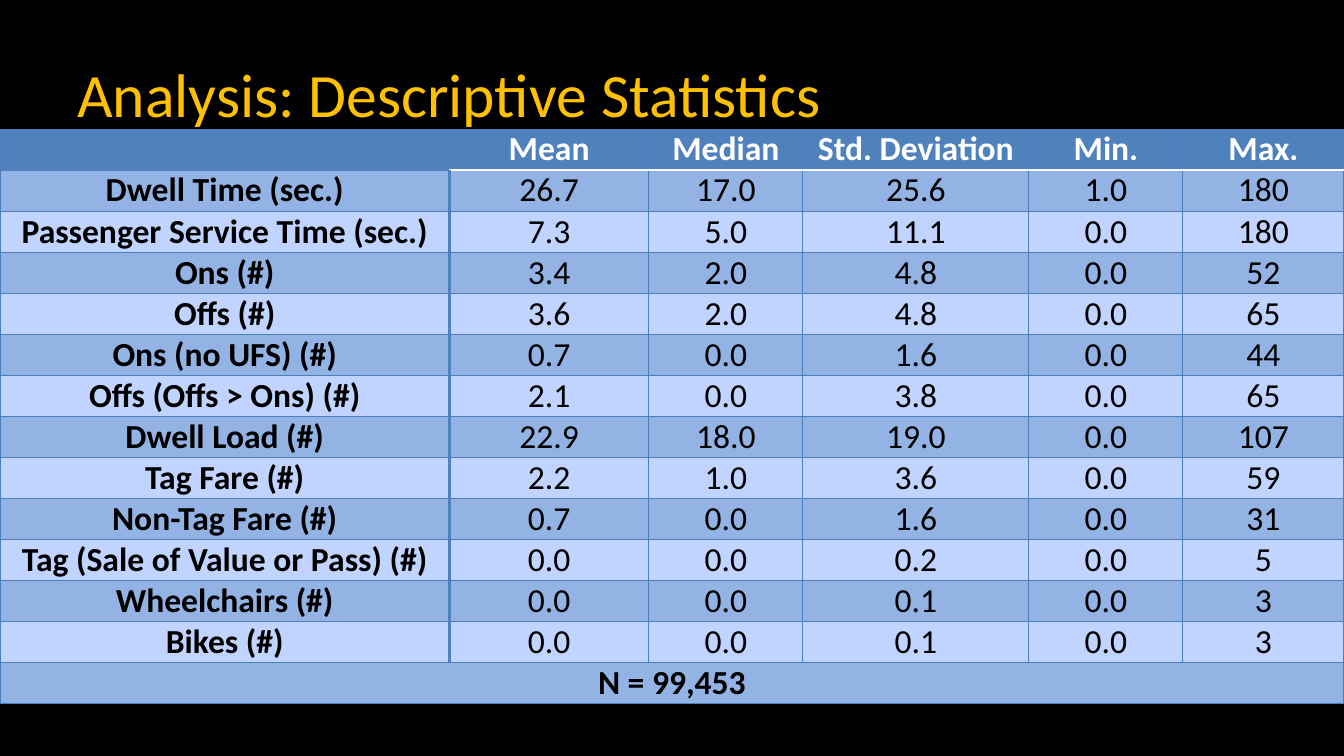
from pptx import Presentation
from pptx.dml.color import RGBColor
from pptx.enum.text import MSO_ANCHOR, PP_ALIGN
from pptx.oxml.xmlchemy import OxmlElement
from pptx.util import Pt

HEADER, DARK, LIGHT = "4F81BD", "93B3E5", "C0D4FF"
THIN = ("4B7EBC", 0.75)
HEADER_RULE = ("FFFFFF", 2)
LABEL_RULE = ("4F81BD", 2)
COL_WIDTHS = [321, 142.5, 110, 161.5, 110, 115]
ROW_HEIGHT = 29.3
ROWS = [
    ["", "Mean", "Median", "Std. Deviation", "Min.", "Max."],
    ["Dwell Time (sec.)", "26.7", "17.0", "25.6", "1.0", "180"],
    ["Passenger Service Time (sec.)", "7.3", "5.0", "11.1", "0.0", "180"],
    ["Ons (#)", "3.4", "2.0", "4.8", "0.0", "52"],
    ["Offs (#)", "3.6", "2.0", "4.8", "0.0", "65"],
    ["Ons (no UFS) (#)", "0.7", "0.0", "1.6", "0.0", "44"],
    ["Offs (Offs > Ons) (#)", "2.1", "0.0", "3.8", "0.0", "65"],
    ["Dwell Load (#)", "22.9", "18.0", "19.0", "0.0", "107"],
    ["Tag Fare (#)", "2.2", "1.0", "3.6", "0.0", "59"],
    ["Non-Tag Fare (#)", "0.7", "0.0", "1.6", "0.0", "31"],
    ["Tag (Sale of Value or Pass) (#)", "0.0", "0.0", "0.2", "0.0", "5"],
    ["Wheelchairs (#)", "0.0", "0.0", "0.1", "0.0", "3"],
    ["Bikes (#)", "0.0", "0.0", "0.1", "0.0", "3"],
    ["N = 99,453", "", "", "", "", ""],
]


def rgb(value):
    return RGBColor.from_string(value)


def paint(fill, color):
    fill.solid()
    fill.fore_color.rgb = rgb(color)


def set_attrs(obj, **values):
    for name, value in values.items():
        setattr(obj, name, value)


def write(p, text, size, color, bold, align):
    p.alignment = align
    r = p.add_run()
    r.text = text
    set_attrs(r.font, name="Calibri", size=Pt(size), bold=bold)
    r.font.color.rgb = rgb(color)


def add_borders(cell, sides):
    tcPr = cell._tc.get_or_add_tcPr()
    for side in "LRTB":
        color, width = sides.get(side, THIN)
        ln = OxmlElement(f"a:ln{side}")
        ln.set("w", str(Pt(width)))
        fill = OxmlElement("a:solidFill")
        clr = OxmlElement("a:srgbClr")
        clr.set("val", color)
        fill.append(clr)
        ln.append(fill)
        tcPr.append(ln)


def cell_borders(row, col):
    sides = {}
    if col > 0 and row == 0:
        sides["B"] = HEADER_RULE
    if col > 0 and row == 1:
        sides["T"] = HEADER_RULE
    if 0 < row < len(ROWS) - 1:
        if col == 0:
            sides["R"] = LABEL_RULE
        if col == 1:
            sides["L"] = LABEL_RULE
    return sides


def format_cell(cell, row, col, text):
    set_attrs(cell, margin_left=Pt(9.36), margin_right=Pt(9.36), margin_top=0,
              margin_bottom=0, vertical_anchor=MSO_ANCHOR.MIDDLE)
    add_borders(cell, cell_borders(row, col))
    paint(cell.fill, HEADER if row == 0 else DARK if row % 2 else LIGHT)
    if text:
        write(cell.text_frame.paragraphs[0], text, 24,
              "FFFFFF" if row == 0 else "000000",
              row == 0 or col == 0, PP_ALIGN.CENTER)


def add_title(s, left, top, width, height):
    sp = s.shapes.title
    set_attrs(sp, left=Pt(left), top=Pt(top), width=Pt(width), height=Pt(height))
    tf = sp.text_frame
    set_attrs(tf, word_wrap=True, vertical_anchor=MSO_ANCHOR.MIDDLE)
    write(tf.paragraphs[0], "Analysis: Descriptive Statistics", 44, "FFC000",
          False, PP_ALIGN.LEFT)


def add_statistics(s, left, top):
    frame = s.shapes.add_table(len(ROWS), len(COL_WIDTHS), Pt(left), Pt(top),
                               Pt(sum(COL_WIDTHS)), Pt(ROW_HEIGHT * len(ROWS)))
    table = frame.table
    set_attrs(table, first_row=False, horz_banding=False)
    for column, width in zip(table.columns, COL_WIDTHS):
        column.width = Pt(width)
    for i, values in enumerate(ROWS):
        table.rows[i].height = Pt(ROW_HEIGHT)
        for j, text in enumerate(values):
            format_cell(table.cell(i, j), i, j, text)
    last = len(ROWS) - 1
    table.cell(last, 0).merge(table.cell(last, len(COL_WIDTHS) - 1))


def main():
    prs = Presentation()
    set_attrs(prs, slide_width=Pt(960), slide_height=Pt(540))
    s = prs.slides.add_slide(prs.slide_layouts[5])
    paint(s.background.fill, "000000")
    add_title(s, 48, 21.6, 864, 90)
    add_statistics(s, 0, 92.16)
    prs.save("out.pptx")


if __name__ == "__main__":
    main()
